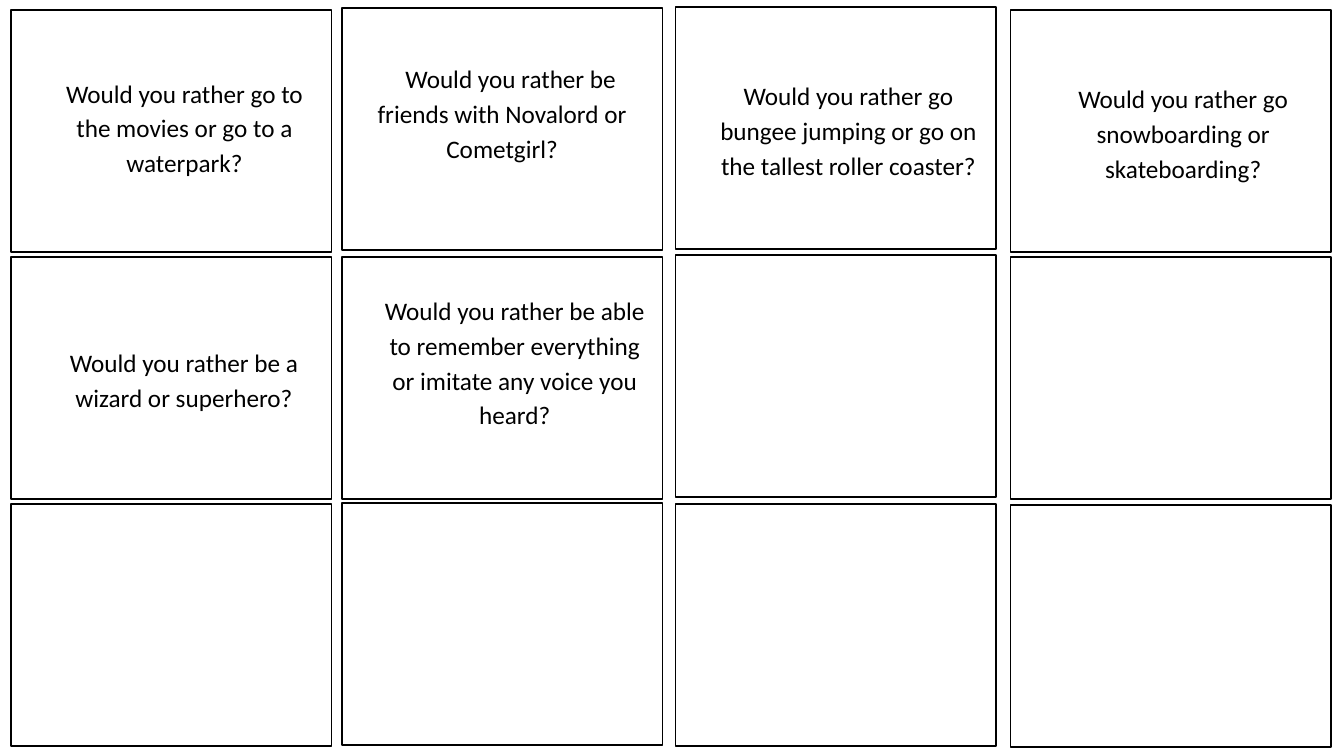
import dataclasses

import pptx
import pptx.dml.color
import pptx.enum.shapes
import pptx.enum.text
import pptx.util


@dataclasses.dataclass(frozen=True)
class Theme:
    font: str = "Calibri"
    question_size: float = 18
    line_spacing: float = 1.15
    border_width: float = 1
    ink: str = "000000"
    paper: str = "FFFFFF"


@dataclasses.dataclass(frozen=True)
class CardGrid:
    left: float = 0.11
    top: float = 0.1
    column_pitch: float = 3.3
    row_pitch: float = 2.45
    card_width: float = 3.18
    card_height: float = 2.4

    def place(self, column, row, shift=(0, 0)):
        return (
            self.left + column * self.column_pitch + shift[0],
            self.top + row * self.row_pitch + shift[1],
        )


COLUMN_SHIFTS = (0, -0.02, -0.01, 0.01)
ROW_SHIFTS = (
    (0, -0.02, -0.03, 0),
    (0, 0, -0.02, 0),
    (0, -0.01, 0, 0.01),
)
MOVIES_QUESTION = "Would you rather go to the movies or go to a waterpark?"
CARD_QUESTIONS = {
    (1, 0): (
        "Would you rather be friends with Novalord or Cometgirl?",
        {"indent": 0, "first_line": 0.17, "bottom_inset": 0.4},
    ),
    (2, 0): (
        "Would you rather go bungee jumping or go on the tallest roller coaster?",
        {},
    ),
    (3, 0): ("Would you rather go snowboarding or skateboarding?", {}),
    (0, 1): ("Would you rather be a wizard or superhero?", {}),
    (1, 1): (
        "Would you rather be able to remember everything or imitate any voice you heard?",
        {"bottom_inset": 0.4},
    ),
}


def write_text(frame, text, *, theme, indent=0.25, first_line=0,
               bottom_inset=0.05, anchor=pptx.enum.text.MSO_ANCHOR.MIDDLE):
    frame.word_wrap = True
    frame.vertical_anchor = anchor
    frame.margin_bottom = pptx.util.Inches(bottom_inset)
    paragraph = frame.paragraphs[0]
    paragraph.alignment = pptx.enum.text.PP_ALIGN.CENTER
    paragraph.line_spacing = theme.line_spacing
    properties = paragraph._p.get_or_add_pPr()
    properties.set("marL", str(pptx.util.Inches(indent)))
    properties.set("indent", str(pptx.util.Inches(first_line)))
    run = paragraph.add_run()
    run.text = text
    run.font.name = theme.font
    run.font.size = pptx.util.Pt(theme.question_size)
    run.font.color.rgb = pptx.dml.color.RGBColor.from_string(theme.ink)


class QuestionSheet:
    def __init__(self, slide, theme, grid):
        self.slide = slide
        self.theme = theme
        self.grid = grid

    def card(self, column, row, shift):
        left, top = self.grid.place(column, row, shift)
        card = self.slide.shapes.add_shape(
            pptx.enum.shapes.MSO_SHAPE.RECTANGLE,
            *map(pptx.util.Inches,
                 (left, top, self.grid.card_width, self.grid.card_height)),
        )
        card.shadow.inherit = False
        card.fill.solid()
        card.fill.fore_color.rgb = pptx.dml.color.RGBColor.from_string(self.theme.paper)
        card.line.color.rgb = pptx.dml.color.RGBColor.from_string(self.theme.ink)
        card.line.width = pptx.util.Pt(self.theme.border_width)
        return card

    def loose_question(self, text, column, row, shift, width, height):
        left, top = self.grid.place(column, row, shift)
        question = self.slide.shapes.add_textbox(
            *map(pptx.util.Inches, (left, top, width, height))
        )
        write_text(question.text_frame, text, theme=self.theme,
                   anchor=pptx.enum.text.MSO_ANCHOR.TOP)
        question.text_frame.auto_size = pptx.enum.text.MSO_AUTO_SIZE.SHAPE_TO_FIT_TEXT


def main():
    presentation = pptx.Presentation()
    presentation.slide_width = pptx.util.Inches(13.33)
    presentation.slide_height = pptx.util.Inches(7.5)
    slide = presentation.slides.add_slide(presentation.slide_layouts[6])
    sheet = QuestionSheet(slide, Theme(), CardGrid())

    for row, row_shifts in enumerate(ROW_SHIFTS):
        for column, shift in enumerate(zip(COLUMN_SHIFTS, row_shifts)):
            card = sheet.card(column, row, shift)
            if (column, row) in CARD_QUESTIONS:
                question, layout = CARD_QUESTIONS[column, row]
                write_text(card.text_frame, question, theme=sheet.theme, **layout)

    sheet.loose_question(MOVIES_QUESTION, 0, 0, (0.11, 0.58), 2.97, 1.13)
    presentation.save("out.pptx")


if __name__ == "__main__":
    main()
